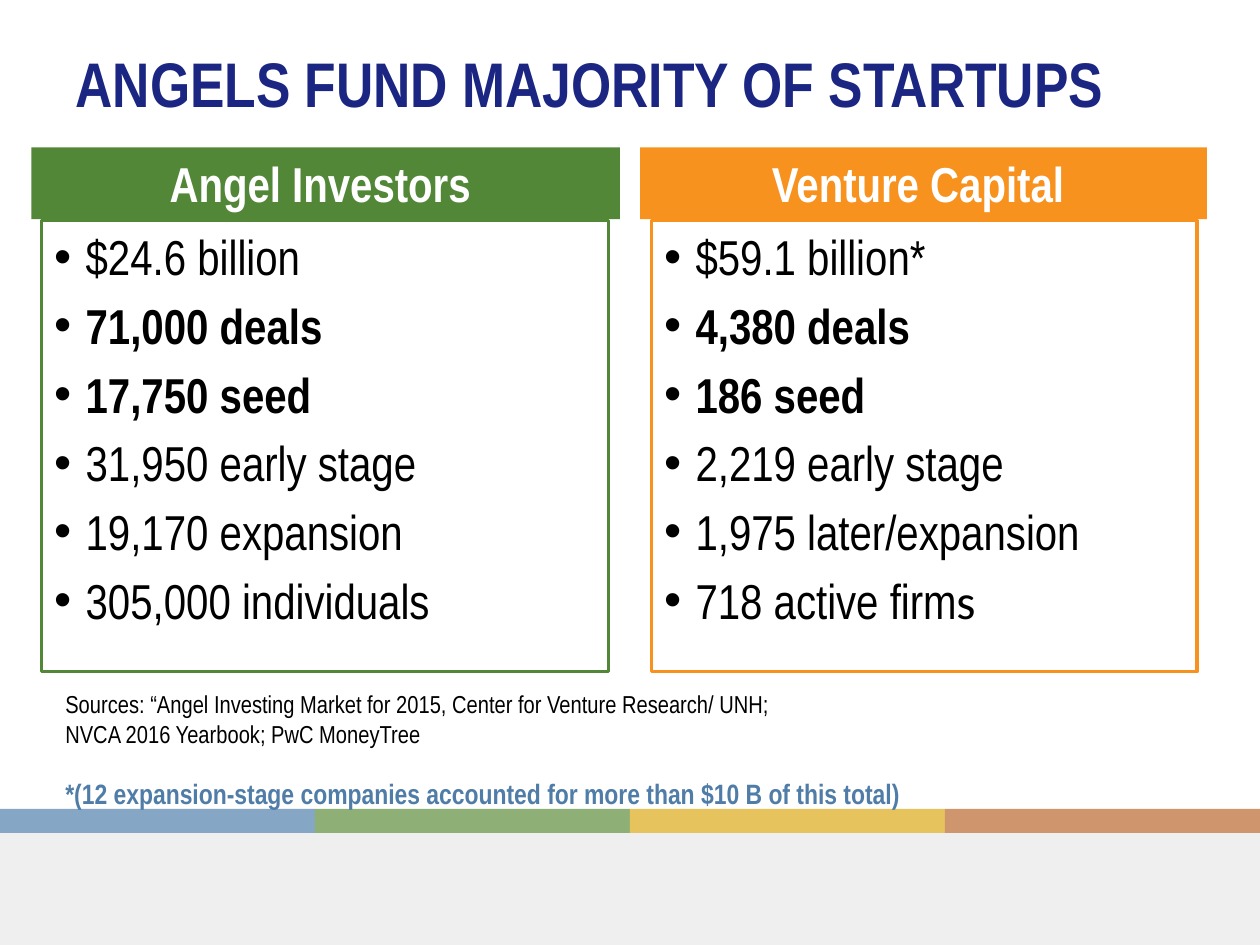
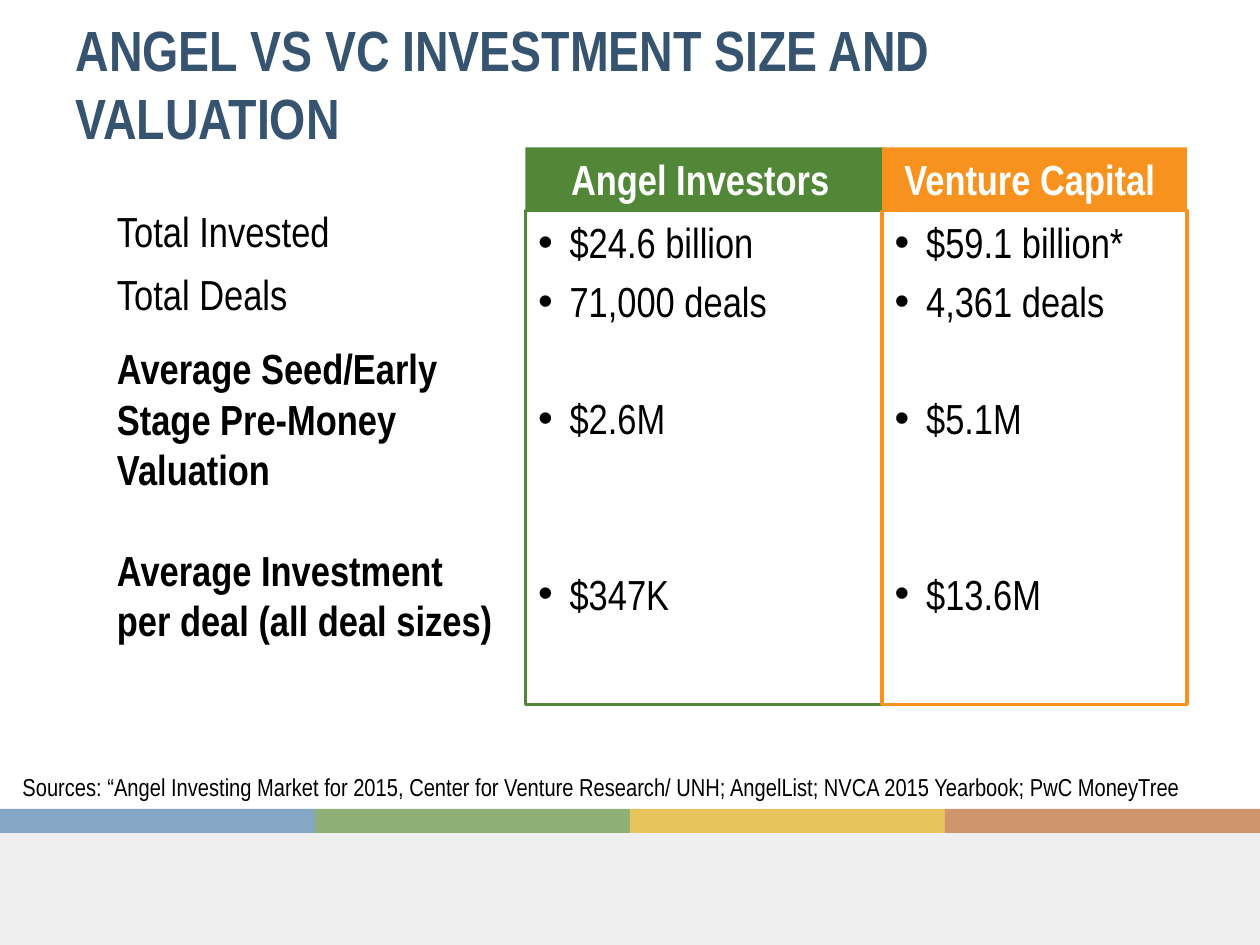
from dataclasses import dataclass
from typing import Optional

from lxml import etree
from pptx import Presentation
from pptx.dml.color import RGBColor
from pptx.enum import shapes, text
from pptx.oxml import ns
from pptx.util import Inches, Pt


@dataclass(frozen=True)
class Theme:
    font: str = "Arial Narrow"
    alt_font: str = "Calibri"
    black: str = "000000"
    white: str = "FFFFFF"
    navy: str = "1A2682"
    slate: str = "365370"
    note_blue: str = "507DA8"
    angel_green: str = "538738"
    venture_orange: str = "F7921E"
    footer_grey: str = "EFEFEF"
    bands: tuple[str, ...] = ("86A6C5", "8EB076", "E6C35C", "CF956D")
    title_size: float = 36
    long_title_size: float = 32.4
    list_size: float = 28
    compare_size: float = 24
    note_size: float = 16
    source_size: float = 14
    paragraph_gap: float = 0.2  # share of the type size
    row_pitch: float = 1.39  # line plus gap, share of the type size


THEME = Theme()


@dataclass(frozen=True)
class Box:
    left: float
    top: float
    width: float
    height: float

    def lengths(self) -> tuple[int, ...]:
        return tuple(Inches(v) for v in (self.left, self.top, self.width, self.height))


@dataclass(frozen=True)
class Item:
    text: str
    bold: bool = False
    skipped_rows: int = 0
    tail: str = ""  # closing letters set in the alternate font


@dataclass(frozen=True)
class Column:
    heading: str
    color: str
    header: Box
    body: Box
    items: tuple[Item, ...]


@dataclass(frozen=True)
class Label:
    text: str
    box: Box
    bold: bool = False


def add_run(p, content: str, *, size: float, color: str = THEME.black,
            bold: bool = False, font: str = THEME.font) -> None:
    r = p.add_run()
    r.text = content
    r.font.name = font
    r.font.size = Pt(size)
    r.font.bold = bold
    r.font.color.rgb = RGBColor.from_string(color)


def add_bullet(p) -> None:
    p_pr = p._p.get_or_add_pPr()
    p_pr.set("marL", str(Inches(0.25)))
    p_pr.set("indent", str(-Inches(0.25)))
    etree.SubElement(p_pr, ns.qn("a:buFont")).set("typeface", "Arial")
    etree.SubElement(p_pr, ns.qn("a:buChar")).set("char", "•")


def write(tf, content: str, *, align=text.PP_ALIGN.LEFT, before: float = 0,
          bullet: bool = False, **run_format):
    """Add a paragraph, using the empty first one when there is one."""
    p = tf.paragraphs[0] if not tf.text else tf.add_paragraph()
    if bullet:
        add_bullet(p)
    p.alignment = align
    p.space_before = Pt(before)
    add_run(p, content, **run_format)
    return p


def place(sp, box: Box) -> None:
    sp.left, sp.top, sp.width, sp.height = box.lengths()


def add_block(slide, box: Box, color: str):
    sp = slide.shapes.add_shape(shapes.MSO_SHAPE.RECTANGLE, *box.lengths())
    sp.shadow.inherit = False
    sp.fill.solid()
    sp.fill.fore_color.rgb = RGBColor.from_string(color)
    sp.line.fill.background()
    return sp


def add_text_box(slide, box: Box):
    tf = slide.shapes.add_textbox(*box.lengths()).text_frame
    tf.word_wrap = True
    return tf


def add_footer_to_layout(slide) -> None:
    """Draw the footer and move it to the layout that the slides share."""
    blocks = [add_block(slide, Box(0, 6.54, 10, 0.96), THEME.footer_grey)]
    width = 10 / len(THEME.bands)
    for i, color in enumerate(THEME.bands):
        blocks.append(add_block(slide, Box(i * width, 6.42, width, 0.19), color))
    for sp in blocks:
        slide.slide_layout.shapes.element.append(sp.element)


def set_title(slide, content: str, *, width: float, size: float, color: str) -> None:
    sp = slide.shapes.title
    place(sp, Box(0.5, 0.28, width, 0.75))
    tf = sp.text_frame
    tf.auto_size = text.MSO_AUTO_SIZE.NONE
    tf.vertical_anchor = text.MSO_ANCHOR.MIDDLE
    write(tf, content, size=size, color=color, bold=True)


def fill_column(slide, sp, column: Column, size: float) -> None:
    """Turn a body placeholder into a framed list with a coloured header."""
    place(sp, column.body)
    sp.line.color.rgb = RGBColor.from_string(column.color)
    sp.line.width = Pt(2)
    tf = sp.text_frame
    tf.auto_size = text.MSO_AUTO_SIZE.NONE
    for i, item in enumerate(column.items):
        gap = THEME.paragraph_gap + item.skipped_rows * THEME.row_pitch
        p = write(tf, item.text, size=size, bold=item.bold, bullet=True,
                  before=round(gap * size, 1) if i else 0)
        if item.tail:
            add_run(p, item.tail, size=size, font=THEME.alt_font)

    header = add_block(slide, column.header, column.color).text_frame
    header.word_wrap = True
    header.vertical_anchor = text.MSO_ANCHOR.TOP
    write(header, column.heading, size=size, color=THEME.white, bold=True,
          align=text.PP_ALIGN.CENTER)


def fill_columns(slide, columns: tuple[Column, ...], size: float) -> None:
    bodies = [sp for sp in slide.placeholders if sp.placeholder_format.idx in (1, 2)]
    for sp, column in zip(bodies, columns):
        fill_column(slide, sp, column, size)


def make_columns(angel_boxes: tuple[Box, Box], angel_items: tuple[Item, ...],
                 venture_boxes: tuple[Box, Box],
                 venture_items: tuple[Item, ...]) -> tuple[Column, ...]:
    return (
        Column("Angel Investors ", THEME.angel_green, *angel_boxes, angel_items),
        Column("Venture Capital ", THEME.venture_orange, *venture_boxes, venture_items),
    )


MAJORITY_COLUMNS = make_columns(
    (Box(0.25, 1.17, 4.67, 0.57), Box(0.33, 1.75, 4.5, 3.58)),
    (Item("$24.6 billion"), Item("71,000 deals", bold=True),
     Item("17,750 seed", bold=True), Item("31,950 early stage"),
     Item("19,170 expansion"), Item("305,000 individuals")),
    (Box(5.08, 1.17, 4.5, 0.57), Box(5.17, 1.75, 4.33, 3.58)),
    (Item("$59.1 billion*"), Item("4,380 deals", bold=True),
     Item("186 seed", bold=True), Item("2,219 early stage"),
     Item("1,975 later/expansion"), Item("718 active firm", tail="s")),
)

VALUATION_COLUMNS = make_columns(
    (Box(4.17, 1.17, 2.85, 0.5), Box(4.17, 1.67, 2.83, 3.92)),
    (Item("$24.6 billion"), Item("71,000 deals"),
     Item("$2.6M", skipped_rows=1), Item("$347K", skipped_rows=2)),
    (Box(7, 1.17, 2.42, 0.5), Box(7, 1.67, 2.42, 3.92)),
    (Item("$59.1 billion*"), Item("4,361 deals"),
     Item("$5.1M", skipped_rows=1), Item("$13.6M", skipped_rows=2)),
)

VALUATION_LABELS = (
    Label("Total Invested", Box(0.83, 1.58, 3.08, 0.5)),
    Label("Total Deals", Box(0.83, 2.08, 3.08, 0.5)),
    Label("Average Seed/Early Stage Pre-Money Valuation",
          Box(0.83, 2.67, 3.25, 1.31), bold=True),
    Label("Average Investment per deal (all deal sizes)",
          Box(0.83, 4.27, 3.25, 0.91), bold=True),
)

MARKET_SOURCE = "Sources: “Angel Investing Market for 2015, Center for Venture Research/ UNH;"


def build_majority_slide(slide) -> None:
    set_title(slide, "ANGELS FUND MAJORITY OF STARTUPS", width=8.83,
              size=THEME.title_size, color=THEME.navy)
    fill_columns(slide, MAJORITY_COLUMNS, THEME.list_size)
    tf = add_text_box(slide, Box(0.42, 5.42, 9.08, 1.08))
    for line in (MARKET_SOURCE, "NVCA 2016 Yearbook; PwC MoneyTree"):
        write(tf, line, size=THEME.source_size)
    write(tf, "*(12 expansion-stage companies accounted for more than $10 B of this total)",
          size=THEME.note_size, color=THEME.note_blue, bold=True, before=16.5)


def build_valuation_slide(slide) -> None:
    set_title(slide, "ANGEL VS VC INVESTMENT SIZE AND VALUATION", width=9.1,
              size=THEME.long_title_size, color=THEME.slate)
    fill_columns(slide, VALUATION_COLUMNS, THEME.compare_size)
    for label in VALUATION_LABELS:
        write(add_text_box(slide, label.box), label.text,
              size=THEME.compare_size, bold=label.bold)
    write(add_text_box(slide, Box(0.08, 6.08, 9.67, 0.34)),
          f"{MARKET_SOURCE} AngelList; NVCA 2015 Yearbook; PwC MoneyTree",
          size=THEME.source_size)


def main() -> None:
    prs = Presentation()
    prs.slide_width, prs.slide_height = Inches(10), Inches(7.5)
    two_lists = prs.slide_layouts.get_by_name("Two Content")
    majority, valuation = (prs.slides.add_slide(two_lists) for _ in range(2))
    add_footer_to_layout(majority)
    build_majority_slide(majority)
    build_valuation_slide(valuation)
    prs.save("out.pptx")


if __name__ == "__main__":
    main()
